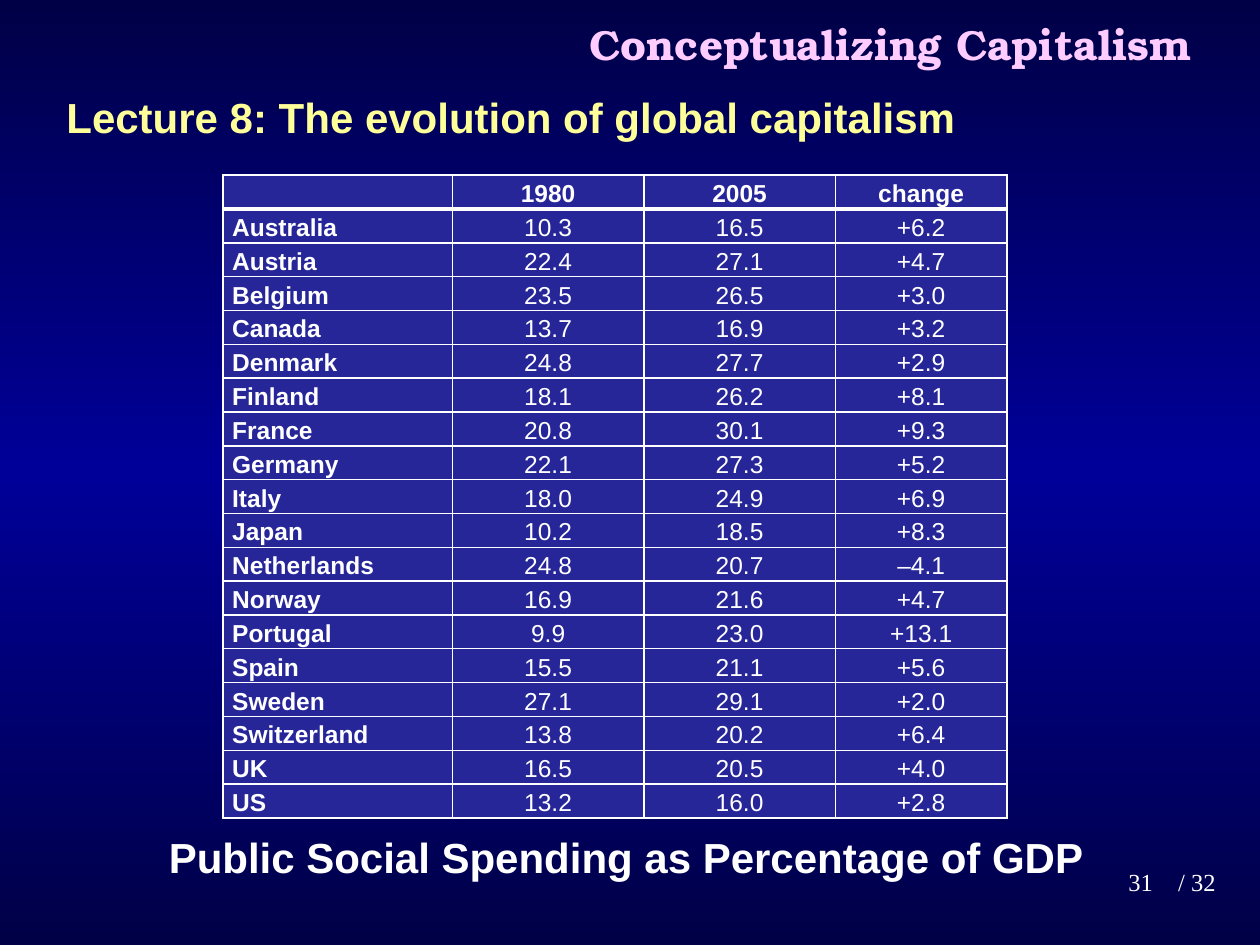
from pptx import Presentation
from pptx.dml.color import RGBColor
from pptx.enum import text as t
from pptx.oxml import parse_xml
from pptx.oxml.ns import nsdecls
from pptx.util import Cm, Pt

WHITE, PINK, YELLOW, CELL = "FFFFFF", "FFCCFF", "FFFF99", "262699"
BACKGROUND = [(0, "000047"), (50, "000099"), (100, "000047")]
LEFT, CENTER, RIGHT = t.PP_ALIGN.LEFT, t.PP_ALIGN.CENTER, t.PP_ALIGN.RIGHT

HEADING = "Conceptualizing Capitalism"
HEADING_BOX = (10.49, 0.03, 14.91, 1.7)
HEADING_FONT = dict(name="TeX Gyre Bonum", size=24, color=PINK, bold=True)

ARIAL = dict(name="Arial", size=24, color=WHITE, bold=True)
TIMES = dict(name="Times New Roman", size=14, color=WHITE, bold=False)
# text, (left, top, width, height) in cm, font, alignment, space before
LABELS = [
    ("31", (21.31, 17.35, 2.18, 1.27), TIMES, RIGHT, 0),
    ("/ 32", (23.5, 17.35, 1.9, 0.84), TIMES, LEFT, 7),
    ("Lecture 8: The evolution of global capitalism",
     (1.09, 1.73, 19.81, 1.27), {**ARIAL, "color": YELLOW}, LEFT, 12),
    ("Public Social Spending as Percentage of GDP",
     (2.92, 16.64, 19.41, 1.27), ARIAL, CENTER, 0),
]

SPENDING = [
    ("", "1980", "2005", "change"),
    ("Australia", "10.3", "16.5", "+6.2"),
    ("Austria", "22.4", "27.1", "+4.7"),
    ("Belgium", "23.5", "26.5", "+3.0"),
    ("Canada", "13.7", "16.9", "+3.2"),
    ("Denmark", "24.8", "27.7", "+2.9"),
    ("Finland", "18.1", "26.2", "+8.1"),
    ("France", "20.8", "30.1", "+9.3"),
    ("Germany", "22.1", "27.3", "+5.2"),
    ("Italy", "18.0", "24.9", "+6.9"),
    ("Japan", "10.2", "18.5", "+8.3"),
    ("Netherlands", "24.8", "20.7", "–4.1"),
    ("Norway", "16.9", "21.6", "+4.7"),
    ("Portugal", "9.9", "23.0", "+13.1"),
    ("Spain", "15.5", "21.1", "+5.6"),
    ("Sweden", "27.1", "29.1", "+2.0"),
    ("Switzerland", "13.8", "20.2", "+6.4"),
    ("UK", "16.5", "20.5", "+4.0"),
    ("US", "13.2", "16.0", "+2.8"),
]
TABLE_LEFT, TABLE_TOP, ROW_HEIGHT = 4.5, 3.53, 0.68
COLUMN_WIDTHS = [4.62, 3.86, 3.86, 3.46]


def rgb(value):
    return RGBColor.from_string(value)


def write(p, text, font, **paragraph):
    for key, value in paragraph.items():
        setattr(p, key, value)
    r = p.add_run()
    r.text = text
    r.font.name, r.font.bold = font["name"], font["bold"]
    r.font.size = Pt(font["size"])
    r.font.color.rgb = rgb(font["color"])


def set_background(s):
    stops = "".join(f'<a:gs pos="{pos * 1000}"><a:srgbClr val="{color}"/></a:gs>'
                    for pos, color in BACKGROUND)
    s.element.cSld.insert(0, parse_xml(
        f'<p:bg {nsdecls("p", "a")}><p:bgPr><a:gradFill rotWithShape="0">'
        f'<a:gsLst>{stops}</a:gsLst><a:lin ang="5400000" scaled="0"/>'
        '</a:gradFill><a:effectLst/></p:bgPr></p:bg>'))


def set_borders(cell, **widths):
    """Draw white borders; widths in points are keyed L, R, T, B."""
    for side, width in widths.items():
        cell._tc.get_or_add_tcPr().append(parse_xml(
            f'<a:ln{side} {nsdecls("a")} w="{Pt(width)}"><a:solidFill>'
            f'<a:srgbClr val="{WHITE}"/></a:solidFill></a:ln{side}>'))


def add_heading(s):
    title = s.shapes.title
    title.left, title.top, title.width, title.height = map(Cm, HEADING_BOX)
    tf = title.text_frame
    tf.auto_size = t.MSO_AUTO_SIZE.NONE
    tf.vertical_anchor = t.MSO_ANCHOR.MIDDLE
    write(tf.paragraphs[0], HEADING, HEADING_FONT, alignment=CENTER)


def add_label(s, text, box, font, alignment, before):
    tf = s.shapes.add_textbox(*map(Cm, box)).text_frame
    tf.word_wrap = True
    write(tf.paragraphs[0], text, font, alignment=alignment, space_before=Pt(before))


def add_spending_table(s):
    last = len(SPENDING) - 1
    table = s.shapes.add_table(
        len(SPENDING), len(COLUMN_WIDTHS), Cm(TABLE_LEFT), Cm(TABLE_TOP),
        Cm(sum(COLUMN_WIDTHS)), Cm(ROW_HEIGHT * len(SPENDING))).table
    table.horz_banding = False
    for column, width in zip(table.columns, COLUMN_WIDTHS):
        column.width = Cm(width)
    for i, values in enumerate(SPENDING):
        table.rows[i].height = Cm(ROW_HEIGHT)
        for j, value in enumerate(values):
            cell = table.cell(i, j)
            cell.margin_left = cell.margin_right = Cm(0.18)
            cell.margin_top = cell.margin_bottom = 0
            cell.vertical_anchor = t.MSO_ANCHOR.MIDDLE
            set_borders(cell, L=1, R=1, T=3 if i == 1 else 1, B=3 if i == 0 else 1)
            cell.fill.solid()
            cell.fill.fore_color.rgb = rgb(CELL)
            p = cell.text_frame.paragraphs[0]
            if not value:
                p._p.append(parse_xml(f'<a:endParaRPr {nsdecls("a")} sz="1400"/>'))
                continue
            write(p, value, {**ARIAL, "size": 14, "bold": i == 0 or j == 0},
                  alignment=CENTER if j else LEFT, line_spacing=1.15,
                  space_before=Pt(6 if i < 2 else 0),
                  space_after=Pt(6 if i in (0, last) else 0))


def main():
    prs = Presentation()
    prs.slide_width, prs.slide_height = Cm(25.4), Cm(19.05)
    s = prs.slides.add_slide(prs.slide_layouts[5])
    set_background(s)
    add_heading(s)
    for label in LABELS:
        add_label(s, *label)
    add_spending_table(s)
    prs.save("out.pptx")


if __name__ == "__main__":
    main()
